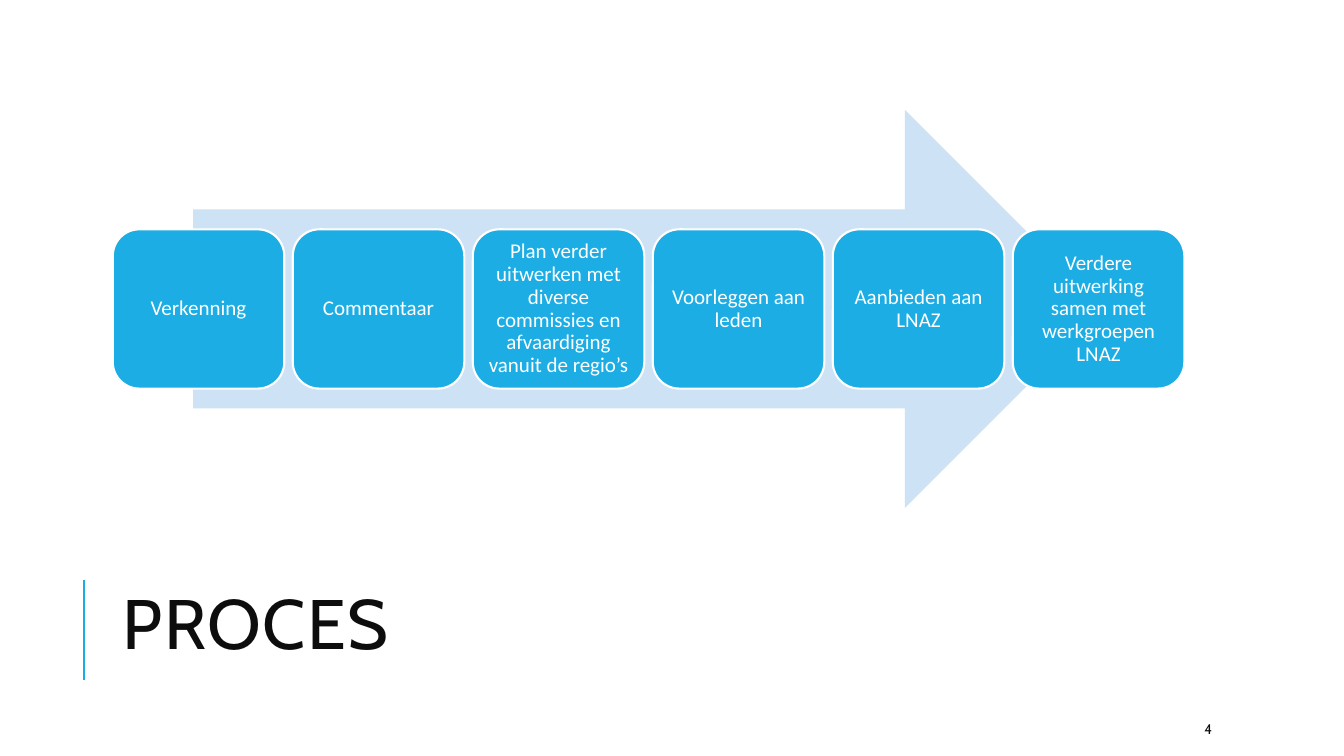
from pptx import Presentation
from pptx.dml.color import RGBColor
from pptx.enum.shapes import MSO_CONNECTOR as Connector, MSO_SHAPE as Shape
from pptx.enum.text import MSO_ANCHOR as Anchor, MSO_AUTO_SIZE as AutoSize, PP_ALIGN as Align
from pptx.oxml.ns import qn
from pptx.util import Pt
from lxml import etree

# Content
TITLE = "PROCES"
PAGE_NUMBER = "4"
STEPS = [
    "Verkenning",
    "Commentaar",
    "Plan verder uitwerken met diverse commissies en afvaardiging vanuit de regio’s",
    "Voorleggen aan leden",
    "Aanbieden aan LNAZ",
    "Verdere uitwerking samen met werkgroepen LNAZ",
]

# Colours
BLUE, PALE_BLUE, WHITE, INK = "1CADE4", "CDE3F5", "FFFFFF", "0D0D0D"

# Diagram measures in points
LEFT, TOP, WIDTH, HEIGHT = 80.6, 78.5, 765.4, 284.4
ARROW_WIDTH = WIDTH * 0.85
STEP_WIDTH, STEP_HEIGHT = 122.5, HEIGHT * 0.4
STEP_PITCH = (WIDTH - STEP_WIDTH) / (len(STEPS) - 1)


def color(hex_string):
    return RGBColor.from_string(hex_string)


def write(shape, text, font_name, size, hex_string, align, spacing=1.0):
    frame = shape.text_frame
    frame.text = text
    frame.word_wrap = True
    frame.auto_size = AutoSize.NONE
    frame.vertical_anchor = Anchor.MIDDLE
    paragraph = frame.paragraphs[0]
    paragraph.alignment = align
    paragraph.line_spacing = spacing
    font = paragraph.runs[0].font
    font.name, font.size = font_name, Pt(size)
    font.color.rgb = color(hex_string)
    return frame


def add_filled(slide, kind, left, top, width, height, fill):
    shape = slide.shapes.add_shape(kind, Pt(left), Pt(top), Pt(width), Pt(height))
    shape.shadow.inherit = False
    shape.fill.solid()
    shape.fill.fore_color.rgb = color(fill)
    return shape


def add_title(slide):
    title = slide.shapes.title
    title.left, title.top, title.width, title.height = Pt(80.6), Pt(390.2), Pt(765.4), Pt(118)
    frame = write(title, TITLE, "Cabin", 50, INK, Align.LEFT, 0.8)
    frame.paragraphs[0].runs[0].font._element.set("spc", "100")

    # Accent line beside the title
    accent = slide.shapes.add_connector(Connector.STRAIGHT, Pt(60), Pt(486), Pt(60), Pt(414))
    accent.line.color.rgb = color(BLUE)
    accent.line.width = Pt(1.5)
    etree.SubElement(accent._element.spPr, qn("a:effectLst"))


def add_process(slide):
    # Arrow centred behind the steps
    arrow_left = LEFT + (WIDTH - ARROW_WIDTH) / 2
    arrow = add_filled(slide, Shape.RIGHT_ARROW, arrow_left, TOP, ARROW_WIDTH, HEIGHT, PALE_BLUE)
    arrow.line.fill.background()

    # Evenly spaced steps
    step_top = TOP + (HEIGHT - STEP_HEIGHT) / 2
    for index, text in enumerate(STEPS):
        step = add_filled(slide, Shape.ROUNDED_RECTANGLE, LEFT + index * STEP_PITCH,
                          step_top, STEP_WIDTH, STEP_HEIGHT, BLUE)
        step.line.color.rgb = color(WHITE)
        step.line.width = Pt(1.5)
        frame = write(step, text, "Calibri", 15, WHITE, Align.CENTER, 0.9)
        frame.margin_left = frame.margin_right = Pt(4.5)
        frame.margin_top = frame.margin_bottom = Pt(4.5)


def main():
    presentation = Presentation()
    presentation.slide_width, presentation.slide_height = Pt(960), Pt(540)
    slide = presentation.slides.add_slide(presentation.slide_layouts[5])
    add_title(slide)
    add_process(slide)

    # Page number
    number = slide.shapes.add_textbox(Pt(853.2), Pt(509.8), Pt(76.3), Pt(21.6))
    write(number, PAGE_NUMBER, "Cabin", 10, INK, Align.LEFT)
    presentation.save("out.pptx")


if __name__ == "__main__":
    main()
